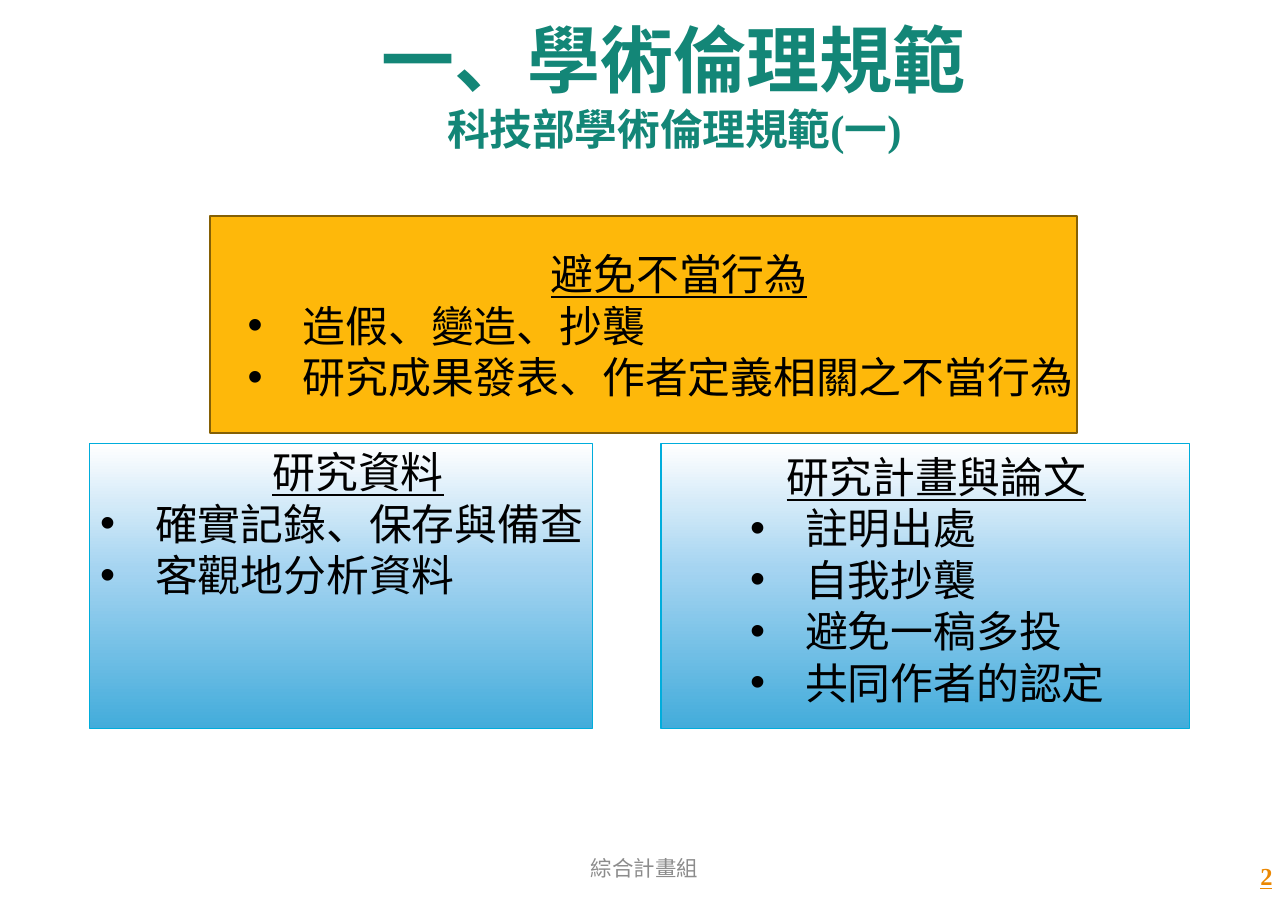
import copy
import pptx
import pptx.util
import pptx.dml.color
import pptx.enum.shapes
import pptx.enum.text
import lxml.etree
import pptx.oxml.ns

Inches = pptx.util.Inches
Pt = pptx.util.Pt
RGBColor = pptx.dml.color.RGBColor
Align = pptx.enum.text.PP_ALIGN
Anchor = pptx.enum.text.MSO_ANCHOR
qn = pptx.oxml.ns.qn

BLACK = RGBColor(0x00, 0x00, 0x00)
GREEN = RGBColor(0x13, 0x86, 0x77)
GRAY = RGBColor(0x8C, 0x8C, 0x8C)
ORANGE = RGBColor(0xEB, 0x88, 0x03)
GOLD = RGBColor(0xFE, 0xB8, 0x0A)
BROWN = RGBColor(0x85, 0x60, 0x05)
CYAN = RGBColor(0x00, 0xAD, 0xDC)
FADE = [
    (0, RGBColor(0xFF, 0xFF, 0xFF)),
    (0.44, RGBColor(0xA5, 0xD4, 0xF1)),
    (1, RGBColor(0x43, 0xAC, 0xDB)),
]
SERIF = "Times New Roman"
SANS = "Noto Sans CJK SC"

deck = pptx.Presentation()
deck.slide_width = Inches(11.69)
deck.slide_height = Inches(8.27)
page = deck.slides.add_slide(deck.slide_layouts[6])


def add_box(area, anchor, margins):
    box = page.shapes.add_textbox(*[Inches(length) for length in area])
    frame = box.text_frame
    frame.word_wrap = True
    frame.vertical_anchor = anchor
    frame.margin_left = frame.margin_right = Inches(margins[0])
    frame.margin_top = frame.margin_bottom = Inches(margins[1])
    return frame


def add_line(frame, number, text, size, color, font, align):
    para = frame.paragraphs[0] if number == 0 else frame.add_paragraph()
    para.alignment = align
    span = para.add_run()
    span.text = text
    span.font.size = Pt(size)
    span.font.name = font
    span.font.color.rgb = color
    return para, span


title = add_box((0.59, 0.2, 11.06, 1.13), Anchor.MIDDLE, (0.11, 0.06))
for number, (text, size) in enumerate([("一、學術倫理規範", 47.7), ("科技部學術倫理規範(一)", 27.9)]):
    para, span = add_line(title, number, text, size, GREEN, SERIF, Align.CENTER)
    span.font.bold = True

footer = add_box((4, 7.66, 3.7, 0.44), Anchor.MIDDLE, (0.11, 0.06))
add_line(footer, 0, "綜合計畫組", 14, GRAY, SERIF, Align.CENTER)

page_number = add_box((8.93, 7.76, 2.73, 0.43), Anchor.TOP, (0.11, 0.06))
para, span = add_line(page_number, 0, "2", 16, ORANGE, SERIF, Align.RIGHT)
span.font.bold = True
span.font.underline = True

panels = [
    ((6, 4.03, 4.8, 2.58), None, CYAN, 0.75, (6.71, 4.04, 3.58, 2.93),
     ["研究計畫與論文", "註明出處", "自我抄襲", "避免一稿多投", "共同作者的認定"]),
    ((0.81, 4.03, 4.57, 2.58), None, CYAN, 0.75, (0.81, 4, 4.88, 1.51),
     ["研究資料", "確實記錄、保存與備查", "客觀地分析資料"]),
    ((1.91, 1.96, 7.87, 1.97), GOLD, BROWN, 1.25, (2.15, 2.2, 8.03, 1.51),
     ["避免不當行為", "造假、變造、抄襲", "研究成果發表、作者定義相關之不當行為"]),
]

for area, solid, outline, weight, text_area, lines in panels:
    panel = page.shapes.add_shape(
        pptx.enum.shapes.MSO_SHAPE.RECTANGLE, *[Inches(length) for length in area])
    panel.shadow.inherit = False
    panel.line.color.rgb = outline
    panel.line.width = Pt(weight)
    if solid:
        panel.fill.solid()
        panel.fill.fore_color.rgb = solid
    else:
        panel.fill.gradient()
        panel.fill.gradient_angle = 270
        stop_list = panel.fill._xPr.find(qn("a:gradFill")).find(qn("a:gsLst"))
        stop_list.insert(1, copy.deepcopy(stop_list[0]))
        for stop, (position, color) in zip(panel.fill.gradient_stops, FADE):
            stop.position = position
            stop.color.rgb = color

    frame = add_box(text_area, Anchor.TOP, (0.1, 0.05))
    for number, text in enumerate(lines):
        heading = number == 0
        para, span = add_line(frame, number, text, 28, BLACK, SANS,
                              Align.CENTER if heading else Align.LEFT)
        span.font.underline = heading
        if not heading:
            settings = para._p.get_or_add_pPr()
            settings.set("marL", str(Inches(0.5)))
            settings.set("indent", str(-Inches(0.5)))
            lxml.etree.SubElement(settings, qn("a:buFont")).set("typeface", "Arial")
            lxml.etree.SubElement(settings, qn("a:buChar")).set("char", "•")

deck.save("out.pptx")
